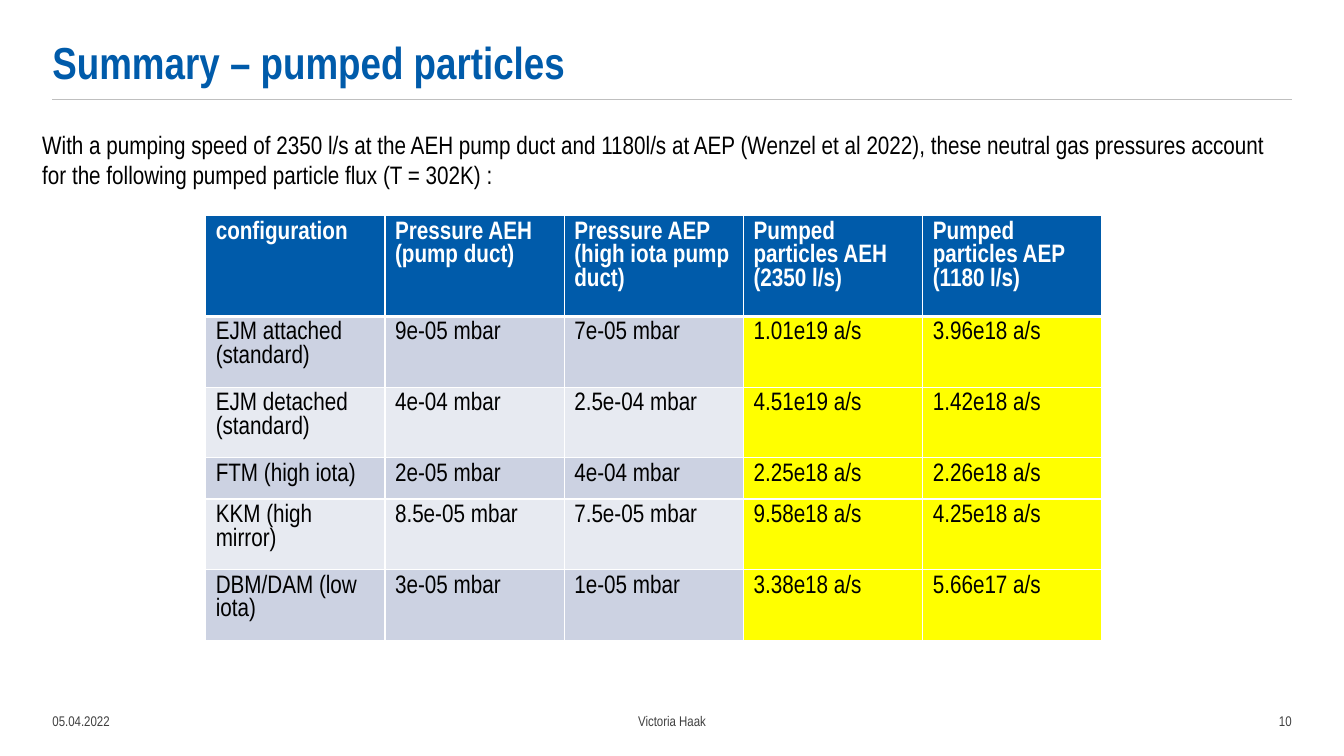
from dataclasses import dataclass

from lxml import etree
from pptx import Presentation
from pptx.dml.color import RGBColor
from pptx.enum.shapes import MSO_CONNECTOR
from pptx.enum.text import MSO_ANCHOR, PP_ALIGN
from pptx.oxml.ns import qn
from pptx.util import Inches, Pt

LINE = MSO_CONNECTOR.STRAIGHT
TOP, MID, LOW = MSO_ANCHOR.TOP, MSO_ANCHOR.MIDDLE, MSO_ANCHOR.BOTTOM
LEFT, CENTER, RIGHT = PP_ALIGN.LEFT, PP_ALIGN.CENTER, PP_ALIGN.RIGHT


@dataclass(frozen=True)
class Theme:
    font: str = "Arial Narrow"
    blue: str = "005BAA"
    white: str = "FFFFFF"
    black: str = "000000"
    gray: str = "404040"
    rule: str = "BFBFBF"
    bands: tuple = ("CCD2E2", "E7EAF1")
    mark: str = "FFFF00"
    title: int = 32
    body: int = 18
    small: int = 10


THEME = Theme()
WIDE, HIGH = 13.33, 7.5
EDGE = 0.52
SPAN = WIDE - 2 * EDGE
HEAD = ["configuration", "Pressure AEH (pump duct)",
        "Pressure AEP (high iota pump duct)",
        "Pumped particles AEH\n(2350 l/s)", "Pumped particles AEP\n(1180 l/s)"]
DATA = [
    ["EJM attached (standard)", "9e-05 mbar", "7e-05 mbar", "1.01e19 a/s", "3.96e18 a/s"],
    ["EJM detached (standard)", "4e-04 mbar", "2.5e-04 mbar", "4.51e19 a/s", "1.42e18 a/s"],
    ["FTM (high iota)", "2e-05 mbar", "4e-04 mbar", "2.25e18 a/s", "2.26e18 a/s"],
    ["KKM (high mirror)", "8.5e-05 mbar", "7.5e-05 mbar", "9.58e18 a/s", "4.25e18 a/s"],
    ["DBM/DAM (low iota)", "3e-05 mbar", "1e-05 mbar", "3.38e18 a/s", "5.66e17 a/s"],
]
ROWS = [0.8, 0.57, 0.57, 0.41, 0.57, 0.57]
INTRO = ("With a pumping speed of 2350 l/s at the AEH pump duct and 1180l/s at AEP "
         "(Wenzel et al 2022), these neutral gas pressures account for the following "
         "pumped particle flux (T = 302K) :")


def style(frame, size, color, bold=False, align=LEFT, lead=None):
    for para in frame.paragraphs:
        para.alignment = align
        para.line_spacing = lead
        para.font.name = THEME.font
        para.font.size = Pt(size)
        para.font.bold = bold
        para.font.color.rgb = RGBColor.from_string(color)


def label(slide, box, text, size, color, anchor=TOP, pad=0.1, **look):
    frame = slide.shapes.add_textbox(*map(Inches, box)).text_frame
    frame.word_wrap = True
    frame.vertical_anchor = anchor
    frame.margin_left = frame.margin_right = Inches(pad)
    frame.text = text
    style(frame, size, color, **look)


def header(slide, box):
    left, top, width, height = box
    label(slide, (left, top, width * 0.85, height - 0.06), "Summary – pumped particles",
          THEME.title, THEME.blue, LOW, 0, bold=True, lead=0.9)
    base = top + height
    rule = slide.shapes.add_connector(
        LINE, *map(Inches, (left, base, left + width, base)))
    rule.line.color.rgb = RGBColor.from_string(THEME.rule)
    rule.line.width = Pt(1)
    etree.SubElement(rule._element.spPr, qn("a:effectLst"))


def border(cell, low):
    props = cell._tc.get_or_add_tcPr()
    for spot, (side, width) in enumerate((("L", 1), ("R", 1), ("T", 1), ("B", low))):
        edge = etree.Element(qn(f"a:ln{side}"), w=str(Pt(width)))
        fill = etree.SubElement(edge, qn("a:solidFill"))
        etree.SubElement(fill, qn("a:srgbClr"), val=THEME.white)
        props.insert(spot, edge)


def results(slide, box):
    lines = [HEAD] + DATA
    table = slide.shapes.add_table(
        len(lines), len(HEAD), *map(Inches, box)).table
    for col in table.columns:
        col.width = Inches(box[2] / len(HEAD))
    for row, (line, tall) in enumerate(zip(lines, ROWS)):
        table.rows[row].height = Inches(tall)
        for col, text in enumerate(line):
            cell = table.cell(row, col)
            cell.text = text
            top = row == 0
            tint = (THEME.blue if top else THEME.mark if col > 2
                    else THEME.bands[(row - 1) % 2])
            cell.fill.solid()
            cell.fill.fore_color.rgb = RGBColor.from_string(tint)
            style(cell.text_frame, THEME.body, THEME.white if top else THEME.black,
                  bold=top)
            border(cell, 3 if top else 1)


def footer(slide, box):
    left, top, width, height = box
    side = width * 0.1
    parts = (("05.04.2022", left, side, LEFT),
             ("Victoria Haak", left + side, width - 2 * side, CENTER),
             ("10", left + width - side, side, RIGHT))
    for text, start, span, align in parts:
        label(slide, (start, top, span, height), text, THEME.small, THEME.gray,
              MID, 0, align=align)


def main():
    deck = Presentation()
    deck.slide_width, deck.slide_height = Inches(WIDE), Inches(HIGH)
    slide = deck.slides.add_slide(deck.slide_layouts[6])
    header(slide, (EDGE, 0.21, SPAN, 0.78))
    label(slide, (0.32, 1.23, 12.35, 0.71), INTRO, THEME.body, THEME.black)
    results(slide, (2.04, 2.14, 8.89, sum(ROWS)))
    footer(slide, (EDGE, 6.95, SPAN, 0.4))
    deck.save("out.pptx")


if __name__ == "__main__":
    main()
